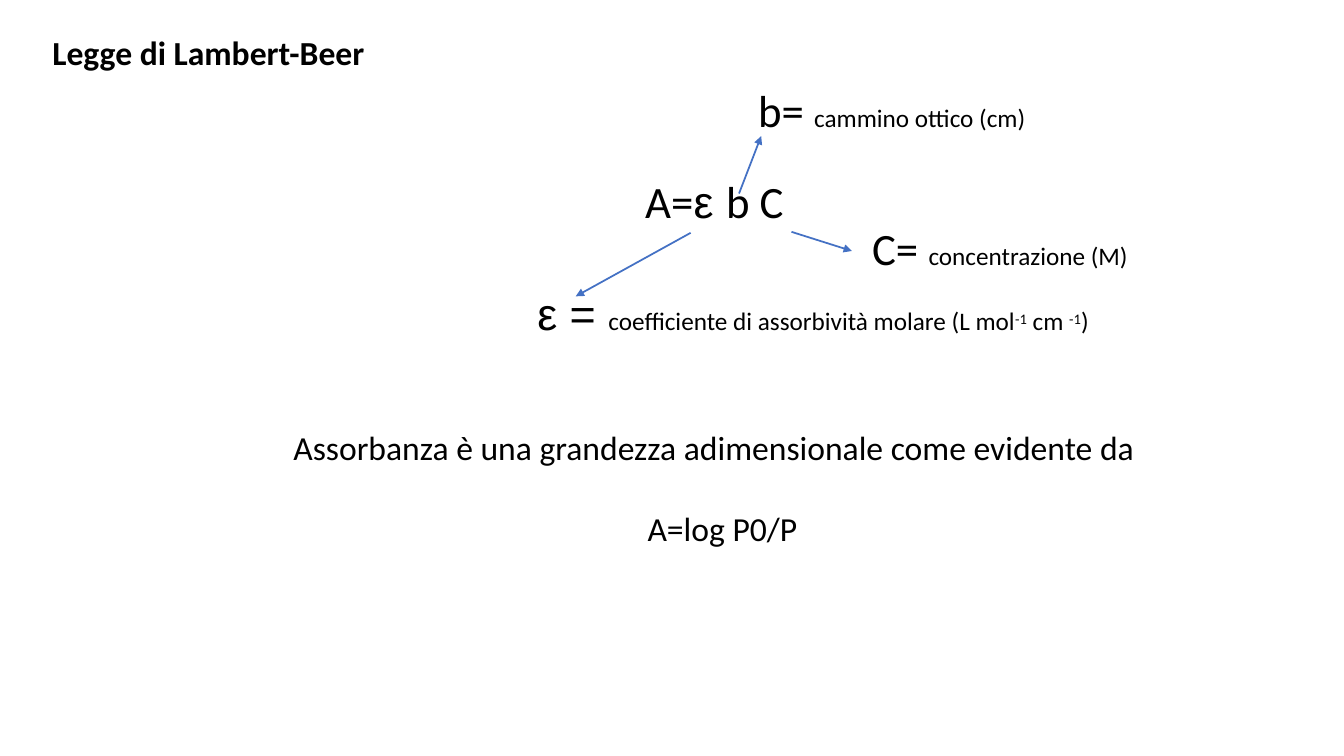
import pptx
import pptx.util
import pptx.dml.color
import pptx.enum.shapes
import pptx.enum.text
from lxml import etree

Inches, Pt = pptx.util.Inches, pptx.util.Pt
ALIGN = pptx.enum.text.PP_ALIGN
BLACK = pptx.dml.color.RGBColor(0x00, 0x00, 0x00)
BLUE = pptx.dml.color.RGBColor(0x44, 0x71, 0xC4)
BODY, GREEK = "Calibri", "Arial"
BIG, MEDIUM, SMALL = 32, 24, 18
NS = "http://schemas.openxmlformats.org/drawingml/2006/main"


def set_frame(sp, box):
    """Place a text shape and clear its margins."""
    sp.left, sp.top, sp.width, sp.height = (Inches(v) for v in box)
    tf = sp.text_frame
    frame = {"margin_left": 0, "margin_top": Inches(0.01), "margin_right": 0,
             "margin_bottom": 0, "word_wrap": True,
             "auto_size": pptx.enum.text.MSO_AUTO_SIZE.NONE,
             "vertical_anchor": pptx.enum.text.MSO_ANCHOR.TOP}
    for name, value in frame.items():
        setattr(tf, name, value)
    return tf


def fill_paragraph(p, runs, indent=0.01, **spacing):
    """Write runs of (text, size, extra font values); 'raised' is superscript."""
    p.alignment = ALIGN.LEFT
    for name, value in spacing.items():
        setattr(p, name, value)
    p._p.get_or_add_pPr().set("marL", str(Inches(indent)))
    p._p.get_or_add_pPr().set("indent", "0")
    for text, size, extra in runs:
        r = p.add_run()
        r.text = text
        values = {"name": BODY, "size": Pt(size), "bold": False, **extra}
        if values.pop("raised", False):
            r._r.get_or_add_rPr().set("baseline", "25000")
        for name, value in values.items():
            setattr(r.font, name, value)
        r.font.color.rgb = BLACK


def add_text(s, box, paragraphs):
    tf = set_frame(s.shapes.add_textbox(0, 0, 0, 0), box)
    for i, (runs, layout) in enumerate(paragraphs):
        p = tf.add_paragraph() if i else tf.paragraphs[0]
        fill_paragraph(p, runs, **layout)


def add_arrow(s, start, end):
    c = s.shapes.add_connector(pptx.enum.shapes.MSO_CONNECTOR.STRAIGHT,
                               *(Inches(v) for v in start + end))
    c.line.color.rgb = BLUE
    c.line.width = Pt(1.25)
    etree.SubElement(c.line._get_or_add_ln(), f"{{{NS}}}tailEnd",
                     type="triangle", w="med", len="med")
    etree.SubElement(c._element.spPr, f"{{{NS}}}effectLst")


def add_title(s, box):
    tf = set_frame(s.shapes.title, box)
    fill_paragraph(tf.paragraphs[0],
                   [("Legge di Lambert-Beer", MEDIUM, {"bold": True})],
                   space_before=Pt(1))


def add_law(s, box):
    """The formula, its three terms and the arrows that lead to them."""
    x, y, w, h = box
    greek, raised = {"name": GREEK}, {"raised": True}

    # Optical path
    add_text(s, (x + 2.24, y, 2.69, 0.56), [
        ([("b= ", BIG, {}), ("cammino ottico (cm)", SMALL, {})],
         {"space_before": Pt(1.1)})])

    # Formula, concentration and molar absorptivity
    add_text(s, (x, y + 0.98, w, h - 0.98), [
        ([("A=", BIG, {}), ("ε ", BIG, greek), ("b C", BIG, {})],
         {"indent": 1.13, "line_spacing": Pt(33.2), "space_before": Pt(1.1)}),
        ([("C= ", BIG, {}), ("concentrazione (M)", SMALL, {})],
         {"indent": 3.38, "line_spacing": Pt(33.2)}),
        ([("ε = ", BIG, greek),
          ("coefficiente di assorbività molare (L mol", SMALL, {}),
          ("-1", SMALL, raised), (" cm ", SMALL, {}),
          ("-1", SMALL, raised), (")", SMALL, {})],
         {"indent": 0.06, "space_before": Pt(8.4)})])

    # Arrows from the formula to each term
    for (x1, y1), (x2, y2) in [((1.58, 1.5), (0.44, 2.13)),
                               ((2.06, 1.11), (2.28, 0.54)),
                               ((2.58, 1.49), (3.18, 1.68))]:
        add_arrow(s, (x + x1, y + y1), (x + x2, y + y2))


def add_absorbance(s, box):
    add_text(s, box, [
        ([("Assorbanza è una grandezza adimensionale come evidente da",
           MEDIUM, {})], {"space_before": Pt(1)}),
        ([("A=log P0/P", MEDIUM, {})],
         {"indent": 0.16, "alignment": ALIGN.CENTER,
          "space_before": Pt(28.8)})])


def main():
    prs = pptx.Presentation()
    prs.slide_width, prs.slide_height = Inches(13.33), Inches(7.5)
    s = prs.slides.add_slide(prs.slide_layouts.get_by_name("Title Only"))
    add_title(s, (0.51, 0.31, 3.4, 0.43))
    add_law(s, (5.27, 0.81, 5.96, 2.58))
    add_absorbance(s, (2.9, 4.23, 8.37, 1.23))
    prs.save("out.pptx")


if __name__ == "__main__":
    main()
